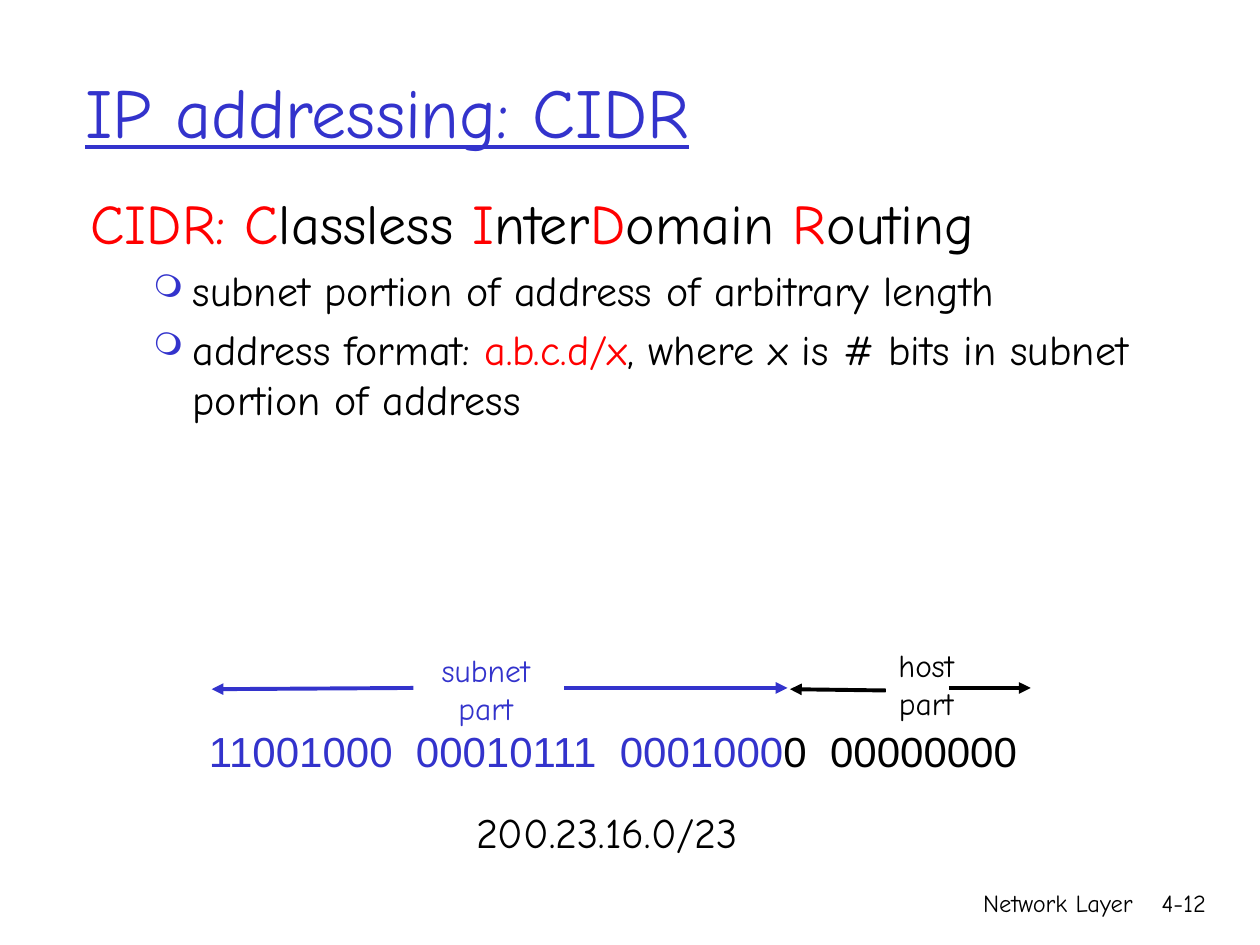
from dataclasses import dataclass

from lxml import etree
from pptx import Presentation
from pptx.dml.color import RGBColor
from pptx.enum.shapes import MSO_CONNECTOR
from pptx.enum.text import MSO_ANCHOR, MSO_AUTO_SIZE, PP_ALIGN
from pptx.oxml.ns import qn
from pptx.util import Inches, Pt

LEFT, MID, RIGHT = PP_ALIGN.LEFT, PP_ALIGN.CENTER, PP_ALIGN.RIGHT
TOP, CENTER = MSO_ANCHOR.TOP, MSO_ANCHOR.MIDDLE
FIXED, GROW = MSO_AUTO_SIZE.NONE, MSO_AUTO_SIZE.SHAPE_TO_FIT_TEXT
STRAIGHT = MSO_CONNECTOR.STRAIGHT


@dataclass(frozen=True)
class Theme:
    blue: RGBColor = RGBColor(0x33, 0x33, 0xCC)
    red: RGBColor = RGBColor(0xFF, 0, 0)
    black: RGBColor = RGBColor(0, 0, 0)
    hand: str = "Comic Neue"
    plain: str = "Arial"
    title: int = 40
    head: int = 32
    text: int = 24
    label: int = 18
    foot: int = 14
    line: float = 2.25


LOOK = Theme()


def assign(target, values):
    for name, value in values.items():
        setattr(target, name, value)


def add_part(parent, tag, **values):
    return etree.SubElement(parent, qn(tag), values)


def add_runs(para, runs, size, font=LOOK.hand, **extra):
    for words, color in runs:
        run = para.add_run()
        run.text = words
        assign(run.font, {"size": Pt(size), "name": font, **extra})
        run.font.color.rgb = color


def add_frame(slide, box, **values):
    frame = slide.shapes.add_textbox(*map(Inches, box)).text_frame
    assign(frame, {"word_wrap": True, "auto_size": FIXED,
                   "vertical_anchor": TOP, **values})
    return frame


def add_text(slide, box, lines, size, align=LEFT, font=LOOK.hand, **values):
    frame = add_frame(slide, box, **values)
    for i, runs in enumerate(lines):
        para = frame.add_paragraph() if i else frame.paragraphs[0]
        para.alignment = align
        add_runs(para, runs, size, font)


def add_title(slide, box):
    frame = add_frame(slide, box, vertical_anchor=CENTER)
    runs = [("IP addressing: CIDR", LOOK.blue)]
    add_runs(frame.paragraphs[0], runs, LOOK.title, underline=True)


def indent(para, left, hang):
    props = para._p.get_or_add_pPr()
    props.set("marL", str(Inches(left)))
    props.set("indent", str(Inches(-hang)))
    return props


def add_bullet(para):
    props = indent(para, 0.81, 0.31)
    color = add_part(props, "a:buClr")
    add_part(color, "a:srgbClr", val=str(LOOK.blue))
    add_part(props, "a:buSzPct", val="75000")
    add_part(props, "a:buChar", char="❍")


def add_body(slide, box):
    red, black = LOOK.red, LOOK.black
    frame = add_frame(slide, box)
    head = frame.paragraphs[0]
    head.space_before = Pt(6.4)
    indent(head, 0.38, 0.38)
    add_runs(head, [("CIDR: C", red), ("lassless ", black), ("I", red),
                    ("nter", black), ("D", red), ("omain ", black),
                    ("R", red), ("outing", black)], LOOK.head)
    points = [
        [("subnet portion of address of arbitrary length", black)],
        [("address format: ", black), ("a.b.c.d/x", red),
         (", where x is # bits in subnet portion of address", black)],
    ]
    for runs in points:
        para = frame.add_paragraph()
        assign(para, {"level": 1, "space_before": Pt(4.8)})
        add_bullet(para)
        add_runs(para, runs, LOOK.text)


def add_arrow(slide, start, end, color):
    line = slide.shapes.add_connector(STRAIGHT, *map(Inches, start + end))
    line.line.width = Pt(LOOK.line)
    line.line.color.rgb = color
    add_part(line.line._get_or_add_ln(), "a:tailEnd", type="triangle")
    add_part(line._element.spPr, "a:effectLst")


def add_address(slide, box):
    left, top, width, height = box
    blue, black = LOOK.blue, LOOK.black
    loose = {"word_wrap": False, "auto_size": GROW}
    add_text(slide, (left, top + 0.63, width, 0.5),
             [[("11001000  00010111  0001000", blue),
               ("0  00000000", black)]],
             LOOK.text, font=LOOK.plain, **loose)
    labels = [("subnet", 1.8, 0.04, 0.99, blue),
              ("host", 5.43, 0, 0.72, black)]
    for word, x, y, wide, color in labels:
        add_text(slide, (left + x, top + y, wide, 0.7),
                 [[(word, color)], [("part", color)]],
                 LOOK.label, MID, **loose)
    arrows = [(2.92, 0.38, 4.69, 0.38, blue), (1.72, 0.38, 0.12, 0.39, blue),
              (5.47, 0.4, 4.71, 0.39, black), (5.97, 0.38, 6.62, 0.38, black)]
    for x1, y1, x2, y2, color in arrows:
        add_arrow(slide, (left + x1, top + y1), (left + x2, top + y2), color)
    add_text(slide, (left + 2.12, top + height - 0.5, 2.6, 0.5),
             [[("200.23.16.0/23", black)]], LOOK.text, **loose)


def add_footer(slide, box):
    left, top, width, height = box
    parts = [("Network Layer", 0, 3.17), ("4-12", width - 0.74, 0.74)]
    for words, x, wide in parts:
        add_text(slide, (left + x, top, wide, height),
                 [[(words, LOOK.black)]], LOOK.foot, RIGHT)


def main():
    deck = Presentation()
    assign(deck, {"slide_width": Inches(10), "slide_height": Inches(7.5)})
    slide = deck.slides.add_slide(deck.slide_layouts[6])
    add_footer(slide, (5.92, 7, 3.75, 0.5))
    add_title(slide, (0.58, 0.25, 8.5, 1.25))
    add_body(slide, (0.62, 1.45, 8.87, 3.47))
    add_address(slide, (1.56, 5.08, 6.7, 1.77))
    deck.save("out.pptx")


if __name__ == "__main__":
    main()
